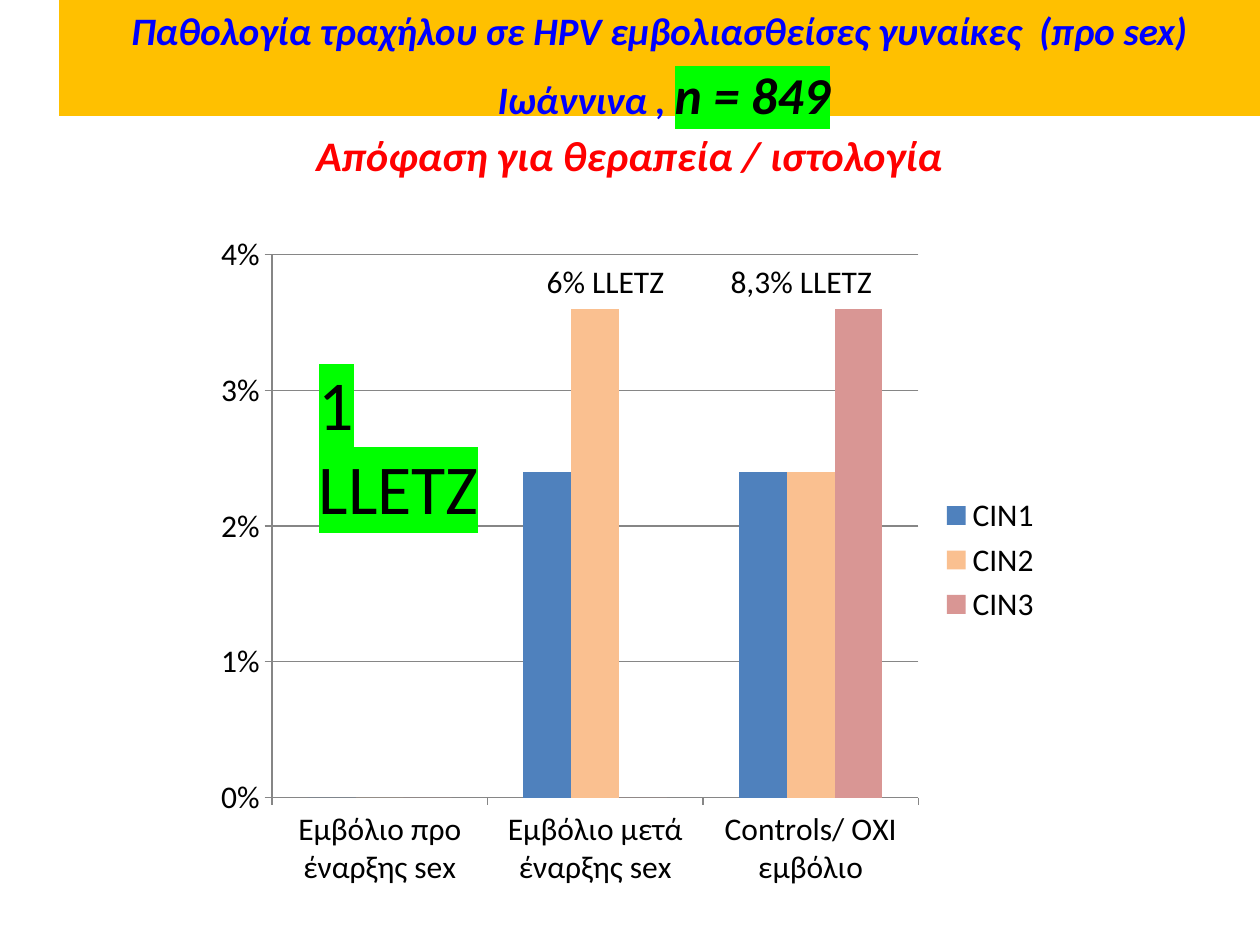
from lxml import etree
from pptx import Presentation
from pptx import util as u
from pptx.chart.data import CategoryChartData
from pptx.dml.color import RGBColor
from pptx.enum import chart as ch, shapes, text
from pptx.oxml import parse_xml
from pptx.oxml.ns import nsdecls, qn

COLORS = {
    "black": "000000", "blue": "0000FF", "red": "FF0000", "banner": "FFC000",
    "marker": "00FF00", "axis": "868686",
    "CIN1": "4F81BD", "CIN2": "FAC090", "CIN3": "D99694",
}


def rgb(name):
    return RGBColor.from_string(COLORS[name])


class SlideBuilder:
    font = "Calibri"

    def __init__(self, prs):
        self.slide = prs.slides.add_slide(prs.slide_layouts[5])

    def style(self, font, size, color, bold=False, italic=False):
        font.name, font.size, font.color.rgb = self.font, u.Pt(size), rgb(color)
        font.bold, font.italic = bold, italic

    def highlight(self, r):
        mark = etree.SubElement(r.font._element, qn("a:highlight"))
        etree.SubElement(mark, qn("a:srgbClr"), val=COLORS["marker"])

    def title(self, words, box, size):
        sp = self.slide.shapes.title
        sp.left, sp.top, sp.width, sp.height = map(u.Pt, box)
        tf = sp.text_frame
        tf.text = words
        tf.vertical_anchor = text.MSO_ANCHOR.MIDDLE
        p = tf.paragraphs[0]
        p.alignment = text.PP_ALIGN.CENTER
        self.style(p.font, size, "red", True, True)

    def label(self, words, box, size=18, marked=False):
        tf = self.slide.shapes.add_textbox(*map(u.Pt, box)).text_frame
        tf.word_wrap = True
        p = tf.paragraphs[0]
        self.style(p.font, size, "black")
        r = p.add_run()
        r.text = words
        if marked:
            self.highlight(r)

    def banner(self, lines, box):
        """Lines are lists of (words, size, color, marked) runs."""
        sp = self.slide.shapes.add_shape(shapes.MSO_SHAPE.RECTANGLE, *map(u.Pt, box))
        sp.shadow.inherit = False
        sp.fill.solid()
        sp.fill.fore_color.rgb = rgb("banner")
        sp.line.fill.background()
        tf = sp.text_frame
        tf.word_wrap = True
        tf.vertical_anchor = text.MSO_ANCHOR.TOP
        for i, runs in enumerate(lines):
            p = tf.add_paragraph() if i else tf.paragraphs[0]
            p.alignment = text.PP_ALIGN.CENTER
            p.space_before = u.Pt(0.2 * max(size for _, size, _, _ in runs))
            for words, size, color, marked in runs:
                r = p.add_run()
                r.text = words
                self.style(r.font, size, color, True, True)
                if marked:
                    # The highlight has to come before the typeface
                    r.font.name = None
                    self.highlight(r)
                    r.font.name = self.font

    def column_chart(self, cats, series, box, plot):
        data = CategoryChartData(number_format="0.0%")
        data.categories = cats
        for name, values in series.items():
            data.add_series(name, values)
        chart = self.slide.shapes.add_chart(
            ch.XL_CHART_TYPE.COLUMN_CLUSTERED, *map(u.Pt, box), data).chart
        self.style(chart.font, 18, "black")
        chart.has_title = False
        chart.has_legend = True
        chart.legend.position = ch.XL_LEGEND_POSITION.RIGHT
        chart.legend.include_in_layout = False

        columns = chart.plots[0]
        columns.gap_width, columns.overlap = 150, 0
        columns.vary_by_categories = False
        for s in columns.series:
            s.format.fill.solid()
            s.format.fill.fore_color.rgb = rgb(s.name)

        axis = chart.value_axis
        axis.minimum_scale, axis.maximum_scale, axis.major_unit = 0, 0.04, 0.01
        axis.tick_labels.number_format = "0%"
        axis.tick_labels.number_format_is_linked = False
        axis.has_major_gridlines = True
        for item in (axis, chart.category_axis, axis.major_gridlines):
            item.format.line.color.rgb = rgb("axis")
            item.format.line.width = u.Pt(0.75)
        self.place_plot(chart, plot)

    def place_plot(self, chart, plot):
        """Fix the inner plot area, as fractions of the chart."""
        parts = "".join(f'<c:{k}Mode val="edge"/>' for k in "xy")
        parts += "".join(f'<c:{k} val="{v}"/>' for k, v in zip("xywh", plot))
        layout = parse_xml(
            f'<c:layout {nsdecls("c")}><c:manualLayout>'
            f'<c:layoutTarget val="inner"/>{parts}</c:manualLayout></c:layout>')
        area = chart._chartSpace.find(".//" + qn("c:plotArea"))
        for old in area.findall(qn("c:layout")):
            area.remove(old)
        area.insert(0, layout)


def main():
    prs = Presentation()
    prs.slide_width, prs.slide_height = u.Pt(720), u.Pt(540)
    s = SlideBuilder(prs)
    s.title("Απόφαση για θεραπεία / ιστολογία", (116.6, 43.2, 486, 90.7), 24)
    s.column_chart(
        ["Eμβόλιο προ έναρξης sex", "Eμβόλιο μετά έναρξης sex",
         "Controls/ OXI εμβόλιο"],
        {"CIN1": (0, 0.024, 0.024),
         "CIN2": (0, 0.036, 0.024),
         "CIN3": (0, 0, 0.036)},
        (116.6, 126, 486, 388), (0.08, 0.05, 0.76, 0.8))
    s.label("1 LLETZ", (175, 202.3, 130.3, 249.8), 40, marked=True)
    s.label("6% LLETZ", (305.3, 146.2, 88.6, 28.8))
    s.label("8,3% LLETZ", (410.4, 146.2, 105.1, 28.8))
    s.banner(
        [[("Παθολογία τραχήλου σε HPV εμβολιασθείσες γυναίκες  (προ sex)",
           22.2, "blue", False)],
         [(" Ιωάννινα , ", 22.2, "blue", False),
          ("n = 849", 29.6, "black", True)]],
        (33.8, 0, 686.2, 66.2))
    prs.save("out.pptx")


if __name__ == "__main__":
    main()
